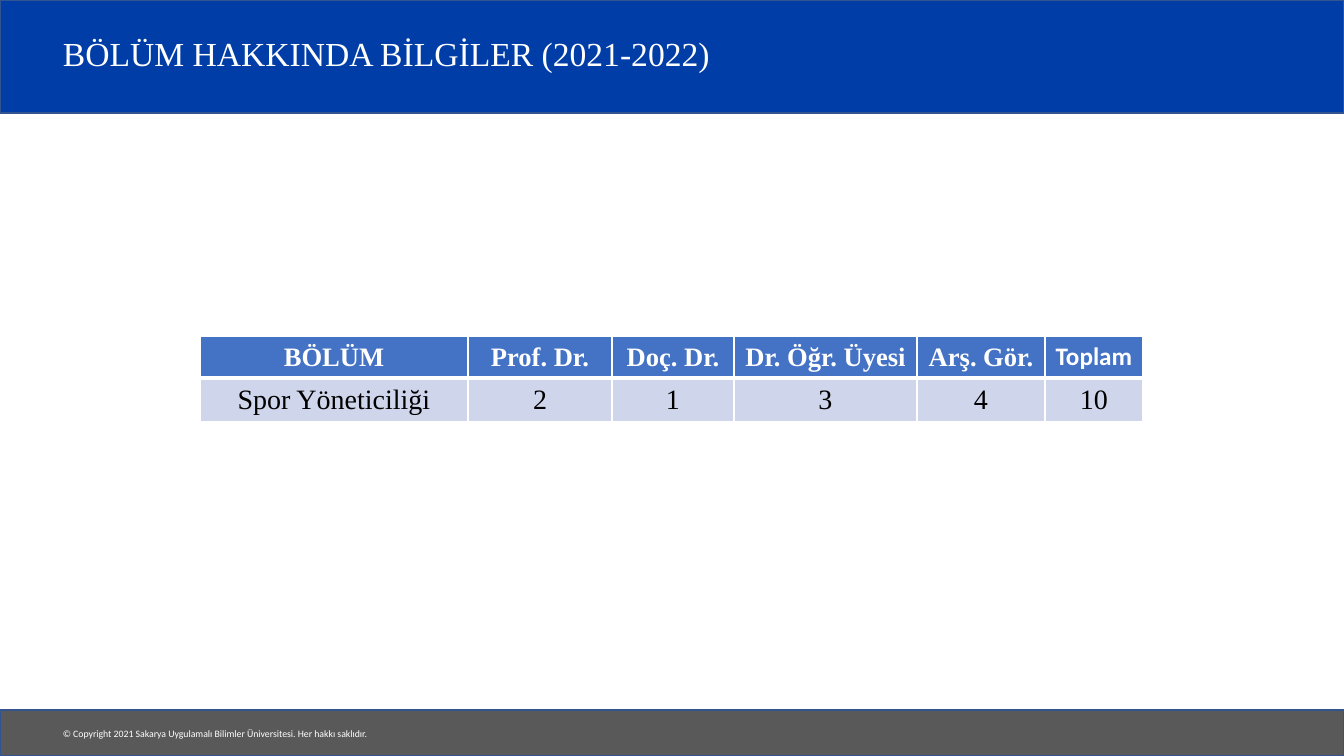
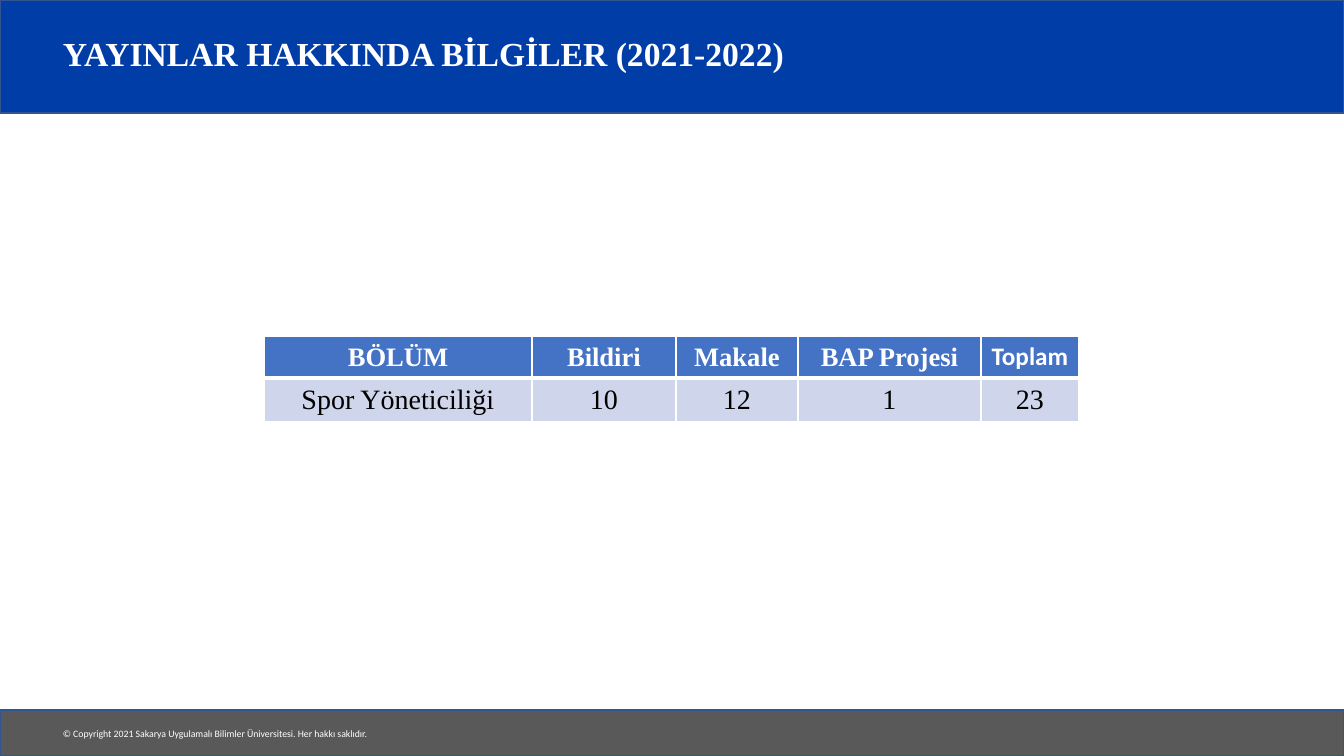
import dataclasses

import pptx
import pptx.dml.color
import pptx.enum.shapes
import pptx.enum.text
import pptx.oxml
import pptx.oxml.ns
import pptx.util


@dataclasses.dataclass(frozen=True)
class Theme:
    band: str = "003DA6"
    footer: str = "595959"
    outline: str = "325491"
    header: str = "4472C4"
    body: str = "CFD5EA"
    light: str = "FFFFFF"
    dark: str = "000000"
    serif: str = "Times New Roman"
    sans: str = "Calibri"
    title_size: int = 24
    header_size: int = 19
    total_size: int = 18
    body_size: int = 20
    footer_size: int = 7


THEME = Theme()
WIDTH, HEIGHT = 1344, 756
SCALE = 12192000 / WIDTH
MIDDLE = pptx.enum.text.MSO_ANCHOR.MIDDLE
TOTAL = "Toplam"


def emu(*lengths):
    return [round(length * SCALE) for length in lengths]


def write(frame, text, size, color, name, bold=False, **layout):
    paragraph = frame.paragraphs[0]
    paragraph.text = text
    for key, value in layout.items():
        setattr(paragraph, key, value)
    font = paragraph.runs[0].font
    for key, value in {"size": pptx.util.Pt(size), "name": name, "bold": bold}.items():
        setattr(font, key, value)
    font.color.rgb = pptx.dml.color.RGBColor.from_string(color)


# Content
BANDS = [(0, 113, THEME.band), (710, 46, THEME.footer)]
COPYRIGHT = "© Copyright 2021 Sakarya Uygulamalı Bilimler Üniversitesi. Her hakkı saklıdır."
TABLE_TOP, ROW_HEIGHT = 336, 41
PAGES = [
    {
        "title": "BÖLÜM HAKKINDA BİLGİLER (2021-2022)",
        "bold": False,
        "widths": [268, 144, 122, 183, 128, 98],
        "rows": [
            ["BÖLÜM", "Prof. Dr.", "Doç. Dr.", "Dr. Öğr. Üyesi", "Arş. Gör.", TOTAL],
            ["Spor Yöneticiliği", "2", "1", "3", "4", "10"],
        ],
    },
    {
        "title": "YAYINLAR HAKKINDA BİLGİLER (2021-2022)",
        "bold": True,
        "widths": [268, 144, 122, 183, 98],
        "rows": [
            ["BÖLÜM", "Bildiri", "Makale", "BAP Projesi", TOTAL],
            ["Spor Yöneticiliği", "10", "12", "1", "23"],
        ],
    },
]

deck = pptx.Presentation()
deck.slide_width, deck.slide_height = emu(WIDTH, HEIGHT)

for page in PAGES:
    slide = deck.slides.add_slide(deck.slide_layouts[6])

    # Top and bottom bands
    for top, height, color in BANDS:
        band = slide.shapes.add_shape(
            pptx.enum.shapes.MSO_SHAPE.RECTANGLE, *emu(0, top, WIDTH, height))
        band.shadow.inherit = False
        band.fill.solid()
        band.fill.fore_color.rgb = pptx.dml.color.RGBColor.from_string(color)
        band.line.color.rgb = pptx.dml.color.RGBColor.from_string(THEME.outline)
        band.line.width = pptx.util.Pt(1)

    # Copyright line
    footer = slide.shapes.add_textbox(*emu(53, 723, 332, 22)).text_frame
    footer.word_wrap = False
    write(footer, COPYRIGHT, THEME.footer_size, THEME.light, THEME.sans)

    # Title
    title = slide.shapes.add_textbox(*emu(53, 19, 1112, 74)).text_frame
    title.word_wrap = True
    title.vertical_anchor = MIDDLE
    write(title, page["title"], THEME.title_size, THEME.light, THEME.serif,
          page["bold"], line_spacing=0.9)

    # Table, centred across the slide
    rows, widths = page["rows"], page["widths"]
    table_width = sum(widths)
    table = slide.shapes.add_table(
        len(rows), len(widths),
        *emu((WIDTH - table_width) // 2, TABLE_TOP, table_width, ROW_HEIGHT * len(rows))).table
    for column, width in zip(table.columns, widths):
        column.width = emu(width)[0]

    for row_index, row in enumerate(rows):
        is_header = row_index == 0
        if is_header:
            fill, color, size = THEME.header, THEME.light, THEME.header_size
        else:
            fill, color, size = THEME.body, THEME.dark, THEME.body_size
        borders = {"L": 1, "R": 1, "T": 1 if is_header else 3, "B": 3 if is_header else 1}

        for column_index, text in enumerate(row):
            cell = table.cell(row_index, column_index)
            cell.vertical_anchor = MIDDLE
            properties = cell._tc.get_or_add_tcPr()
            for side, points in borders.items():
                properties.append(pptx.oxml.parse_xml(
                    f'<a:ln{side} {pptx.oxml.ns.nsdecls("a")} w="{pptx.util.Pt(points)}">'
                    f'<a:solidFill><a:srgbClr val="{THEME.light}"/></a:solidFill></a:ln{side}>'))
            cell.fill.solid()
            cell.fill.fore_color.rgb = pptx.dml.color.RGBColor.from_string(fill)
            is_total = text == TOTAL
            write(cell.text_frame, text, THEME.total_size if is_total else size, color,
                  THEME.sans if is_total else THEME.serif, is_header,
                  alignment=pptx.enum.text.PP_ALIGN.CENTER)

deck.save("out.pptx")
